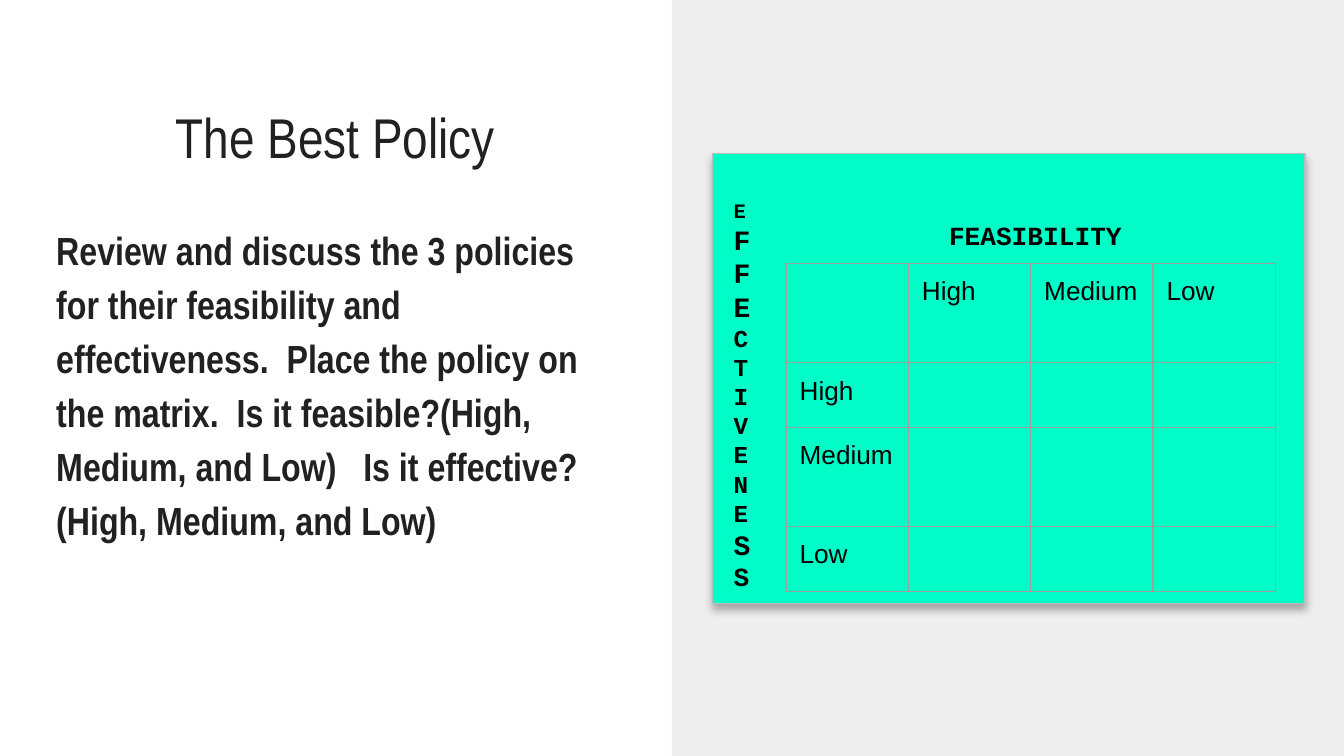
from lxml import etree
from pptx import Presentation
from pptx.dml.color import RGBColor
from pptx.enum import shapes, text
from pptx.oxml import ns
from pptx.util import Inches, Pt

SLIDE_WIDTH, SLIDE_HEIGHT = Inches(10), Inches(45 / 8)
TITLE = "The Best Policy"
PROMPT = (
    "Review and discuss the 3 policies for their feasibility and effectiveness.  "
    "Place the policy on the matrix.  Is it feasible?(High, Medium, and Low)   "
    "Is it effective? (High, Medium, and Low)"
)
COLUMN_AXIS = "FEASIBILITY"
ROW_AXIS = "EFFECTIVENESS"
ROW_AXIS_SIZES = [11] + [15] * 3 + [13] * 7 + [15, 14]
LEVELS = ["High", "Medium", "Low"]
MATRIX = [[""] + LEVELS] + [[level, "", "", ""] for level in LEVELS]
COLUMN_WIDTH = 0.91
ROW_HEIGHTS = [0.74, 0.48, 0.74, 0.48]

THEME = {
    "panel": "EEEEEE",
    "card": "00FDC8",
    "card_line": "BDBDBD",
    "grid": "9E9E9E",
    "shadow": "000000",
    "line_width": 0.75,
    "title": {"name": "Arial Narrow", "size": 30, "color": "212121", "bold": False},
    "body": {"name": "Arial Narrow", "size": 21, "color": "212121", "bold": True},
    "cell": {"name": "Arial", "size": 14, "color": "000000", "bold": False},
    "axis": {"name": "Courier New", "size": 14, "color": "000000", "bold": True},
}
PADDING = {f"margin_{side}": Inches(0.1) for side in ("left", "top", "right", "bottom")}
CENTERED = {"alignment": text.PP_ALIGN.CENTER}
PROSE = {"line_spacing": 1.15, "space_after": Pt(16)}


def assign(target, values):
    for name, value in values.items():
        setattr(target, name, value)


def write(paragraph, words, style):
    span = paragraph.add_run()
    span.text = words
    assign(span.font, {"name": style["name"], "size": Pt(style["size"]), "bold": style["bold"]})
    span.font.color.rgb = RGBColor.from_string(style["color"])


def add_text(page, place, lines, layout, anchor=text.MSO_ANCHOR.TOP):
    frame = page.shapes.add_textbox(*map(Inches, place)).text_frame
    assign(frame, {**PADDING, "word_wrap": True, "vertical_anchor": anchor})
    for index, (words, style) in enumerate(lines):
        paragraph = frame.add_paragraph() if index else frame.paragraphs[0]
        assign(paragraph, layout)
        write(paragraph, words, style)


def add_panel(page, place, color):
    panel = page.shapes.add_shape(shapes.MSO_SHAPE.RECTANGLE, *map(Inches, place))
    panel.shadow.inherit = False
    panel.fill.solid()
    panel.fill.fore_color.rgb = RGBColor.from_string(color)
    panel.line.fill.background()
    return panel


def add_card(page, place):
    card = add_panel(page, place, THEME["card"])
    card.line.color.rgb = RGBColor.from_string(THEME["card_line"])
    card.line.width = Pt(THEME["line_width"])
    effects = card._element.spPr.find(ns.qn("a:effectLst"))
    shadow = etree.SubElement(
        effects, ns.qn("a:outerShdw"), blurRad=str(Pt(4)), dist=str(Pt(3)),
        dir=str(90 * 60000), algn="bl", rotWithShape="0",
    )
    tint = etree.SubElement(shadow, ns.qn("a:srgbClr"), val=THEME["shadow"])
    etree.SubElement(tint, ns.qn("a:alpha"), val="30000")


def add_borders(cell):
    properties = cell._tc.get_or_add_tcPr()
    for edge in ("lnL", "lnR", "lnT", "lnB"):
        border = etree.SubElement(properties, ns.qn(f"a:{edge}"), w=str(Pt(THEME["line_width"])))
        fill = etree.SubElement(border, ns.qn("a:solidFill"))
        etree.SubElement(fill, ns.qn("a:srgbClr"), val=THEME["grid"])


def fill_cell(cell, label):
    assign(cell, PADDING)
    paragraph = cell.text_frame.paragraphs[0]
    if label:
        write(paragraph, label, THEME["cell"])
    else:
        size = str(THEME["cell"]["size"] * 100)
        etree.SubElement(paragraph._p, ns.qn("a:endParaRPr"), sz=size)
    add_borders(cell)
    cell.fill.background()


def add_matrix(page, left, top):
    width = COLUMN_WIDTH * len(MATRIX[0])
    place = (left, top, width, sum(ROW_HEIGHTS))
    table = page.shapes.add_table(len(MATRIX), len(MATRIX[0]), *map(Inches, place)).table
    assign(table, {"first_row": False, "horz_banding": False})
    for column in table.columns:
        column.width = Inches(COLUMN_WIDTH)
    for row, height, labels in zip(table.rows, ROW_HEIGHTS, MATRIX):
        row.height = Inches(height)
        for cell, label in zip(row.cells, labels):
            fill_cell(cell, label)


def main():
    deck = Presentation()
    assign(deck, {"slide_width": SLIDE_WIDTH, "slide_height": SLIDE_HEIGHT})
    page = deck.slides.add_slide(deck.slide_layouts[6])
    add_panel(page, (5, 0, 5, SLIDE_HEIGHT.inches), THEME["panel"])
    add_card(page, (5.3, 1.14, 4.41, 3.35))
    add_text(page, (0.32, 0.44, 4.35, 0.92), [(TITLE, THEME["title"])], CENTERED,
             text.MSO_ANCHOR.BOTTOM)
    add_text(page, (0.32, 1.53, 4.35, 3.32), [(PROMPT, THEME["body"])], PROSE)
    add_matrix(page, 5.85, 1.96)
    add_text(page, (6.07, 1.53, 3.27, 0.44), [(COLUMN_AXIS, THEME["axis"])], CENTERED)
    letters = [
        (letter, {**THEME["axis"], "size": size})
        for letter, size in zip(ROW_AXIS, ROW_AXIS_SIZES)
    ]
    add_text(page, (5.36, 1.37, 0.49, 3.16), letters, {})
    deck.save("out.pptx")


if __name__ == "__main__":
    main()
